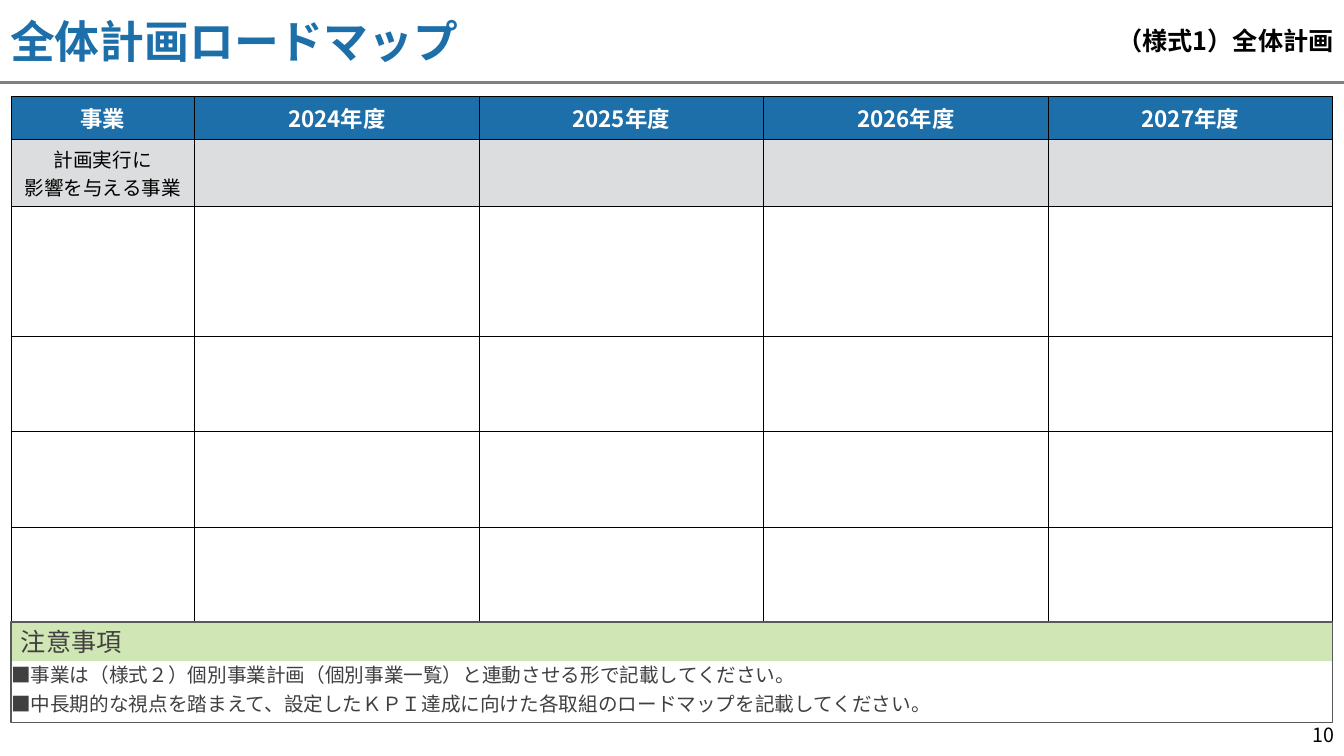
from lxml import etree
from pptx import Presentation
from pptx import util as u
from pptx.dml.color import RGBColor
from pptx.enum import shapes, text
from pptx.oxml.ns import qn

FONT = "Noto Sans CJK JP"
BLUE = RGBColor(0x1D, 0x6F, 0xA9)
GREEN = RGBColor(0xD1, 0xE6, 0xB5)
LIGHT = RGBColor(0xDC, 0xDD, 0xDE)
GRAY = RGBColor(0x80, 0x80, 0x80)
FRAME = RGBColor(0x59, 0x59, 0x59)
DARK = RGBColor(0x40, 0x40, 0x40)
BLACK = RGBColor(0, 0, 0)
WHITE = RGBColor(0xFF, 0xFF, 0xFF)

SLIDE_W, SLIDE_H = 33.87, 19.05
HEAD_H = 2.03
LEFT, BODY_W = 0.28, 33.3
NOTES_TOP = 15.67
COLS = [4.62] + [7.17] * 4
ROWS = [1.08, 1.69, 3.28] + [2.4] * 3
HEADERS = ["事業"] + [f"{year}年度" for year in range(2024, 2028)]
NOTES = [
    "■事業は（様式２）個別事業計画（個別事業一覧）と連動させる形で記載してください。",
    "■中長期的な視点を踏まえて、設定したＫＰＩ達成に向けた各取組のロードマップを記載してください。",
]


def write(tf, lines, size, color, bold=False, align=text.PP_ALIGN.LEFT,
          anchor=text.MSO_ANCHOR.MIDDLE):
    tf.word_wrap = True
    tf.vertical_anchor = anchor
    for i, line in enumerate(lines):
        p = tf.paragraphs[0] if i == 0 else tf.add_paragraph()
        p.text = line
        p.alignment = align
        p.font.size = u.Pt(size)
        p.font.bold = bold
        p.font.color.rgb = color
        p.font.name = FONT
        r_pr = p._p.pPr.find(qn("a:defRPr"))
        etree.SubElement(r_pr, qn("a:ea")).set("typeface", FONT)


def add_title(s, line):
    sp = s.shapes.title
    sp.left, sp.top = u.Cm(0), u.Cm(0)
    sp.width, sp.height = u.Cm(26.9), u.Cm(HEAD_H)
    write(sp.text_frame, [line], 32, BLUE, bold=True)
    sp.text_frame.auto_size = text.MSO_AUTO_SIZE.NONE


def add_text(s, box, lines, size, color, **style):
    tf = s.shapes.add_textbox(*map(u.Cm, box)).text_frame
    write(tf, lines, size, color, **style)
    return tf


def add_rect(s, box, fill=None, line=None):
    sp = s.shapes.add_shape(shapes.MSO_SHAPE.RECTANGLE, *map(u.Cm, box))
    sp.shadow.inherit = False
    if fill is None:
        sp.fill.background()
    else:
        sp.fill.solid()
        sp.fill.fore_color.rgb = fill
    if line is None:
        sp.line.fill.background()
    else:
        sp.line.color.rgb = line
        sp.line.width = u.Pt(1)
    return sp


def add_rule(s, y):
    line = s.shapes.add_connector(shapes.MSO_CONNECTOR.STRAIGHT,
                                  u.Cm(0), u.Cm(y), u.Cm(SLIDE_W), u.Cm(y))
    line.line.color.rgb = GRAY
    line.line.width = u.Pt(1.5)
    etree.SubElement(line._element.spPr, qn("a:effectLst"))


def set_borders(cell):
    tc_pr = cell._tc.get_or_add_tcPr()
    for i, side in enumerate(("lnL", "lnR", "lnT", "lnB")):
        ln = etree.Element(qn(f"a:{side}"), w=str(u.Pt(0.5)))
        fill = etree.SubElement(ln, qn("a:solidFill"))
        etree.SubElement(fill, qn("a:srgbClr")).set("val", str(BLACK))
        tc_pr.insert(i, ln)


def add_roadmap(s):
    table = s.shapes.add_table(len(ROWS), len(COLS), u.Cm(LEFT), u.Cm(2.43),
                               u.Cm(BODY_W), u.Cm(sum(ROWS))).table
    for column, width in zip(table.columns, COLS):
        column.width = u.Cm(width)
    fills = [BLUE, LIGHT]
    for i, height in enumerate(ROWS):
        table.rows[i].height = u.Cm(height)
        for cell in table.rows[i].cells:
            if i < len(fills):
                cell.fill.solid()
                cell.fill.fore_color.rgb = fills[i]
            else:
                cell.fill.background()
            set_borders(cell)
    center = text.PP_ALIGN.CENTER
    for cell, header in zip(table.rows[0].cells, HEADERS):
        write(cell.text_frame, [header], 16, WHITE, bold=True, align=center)
        cell.vertical_anchor = text.MSO_ANCHOR.MIDDLE
    cell = table.cell(1, 0)
    write(cell.text_frame, ["計画実行に", "影響を与える事業"], 14, BLACK, align=center)
    cell.vertical_anchor = text.MSO_ANCHOR.MIDDLE


def add_notes_panel(s):
    tf = add_text(s, (LEFT, 16.99, 25.9, 1.07), NOTES, 14, DARK,
                  anchor=text.MSO_ANCHOR.TOP)
    tf.margin_left = tf.margin_right = tf.margin_bottom = 0
    tf.margin_top = u.Cm(0.03)
    tf.auto_size = text.MSO_AUTO_SIZE.SHAPE_TO_FIT_TEXT
    for i, p in enumerate(tf.paragraphs):
        p.line_spacing = u.Pt(8)
        p.space_before = u.Pt(0.9 if i else 0)
        p.space_after = u.Pt(12)
    heading = add_rect(s, (LEFT, NOTES_TOP, BODY_W, 0.99), fill=GREEN)
    write(heading.text_frame, ["注意事項"], 18, DARK)
    add_rect(s, (LEFT, NOTES_TOP, BODY_W, 2.54), line=FRAME)


def main():
    prs = Presentation()
    prs.slide_width, prs.slide_height = u.Cm(SLIDE_W), u.Cm(SLIDE_H)
    s = prs.slides.add_slide(prs.slide_layouts[5])
    right = text.PP_ALIGN.RIGHT
    add_rule(s, 2.08)
    add_title(s, "全体計画ロードマップ")
    add_text(s, (32.18, 18.08, 1.7, 0.97), ["10"], 14, BLACK, align=right,
             anchor=text.MSO_ANCHOR.TOP)
    add_roadmap(s)
    add_notes_panel(s)
    add_text(s, (26.19, 0, 7.67, HEAD_H), ["（様式1）全体計画"], 18, BLACK,
             bold=True, align=right)
    prs.save("out.pptx")


if __name__ == "__main__":
    main()
